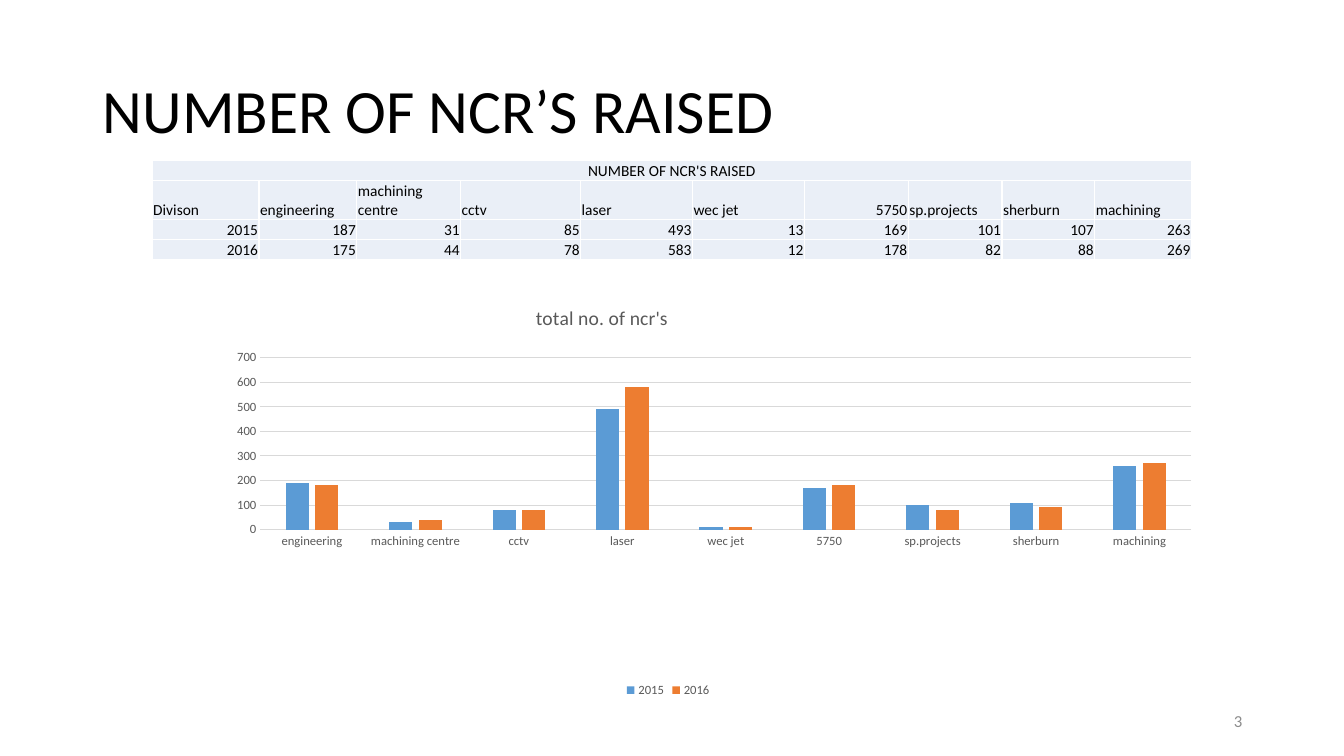
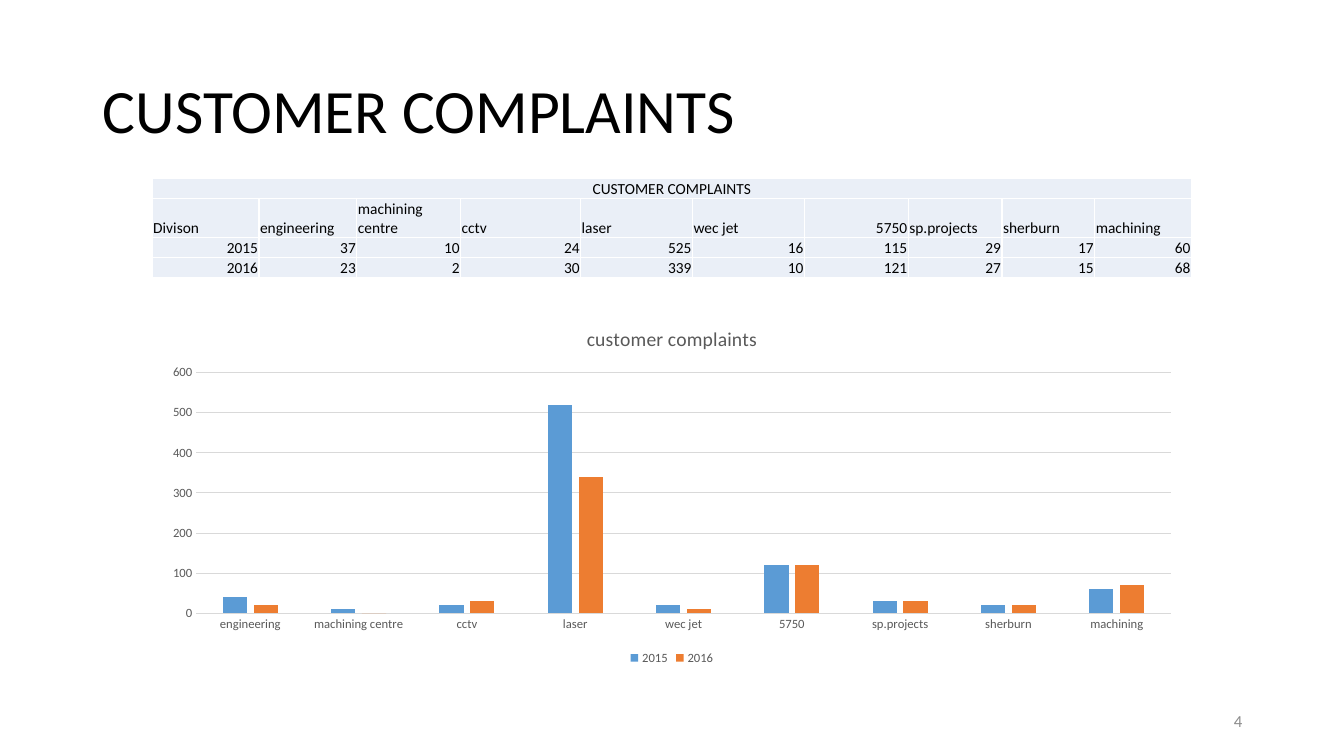
from dataclasses import dataclass
from typing import NamedTuple, Optional

from lxml.etree import SubElement
from pptx import Presentation
from pptx.chart.chart import Chart
from pptx.chart.data import CategoryChartData
from pptx.dml.color import RGBColor
from pptx.enum.chart import XL_CHART_TYPE, XL_LEGEND_POSITION, XL_TICK_MARK
from pptx.enum.text import MSO_ANCHOR, PP_ALIGN
from pptx.oxml import parse_xml
from pptx.oxml.ns import nsdecls, qn
from pptx.slide import Slide
from pptx.table import _Cell
from pptx.text.text import Font
from pptx.util import Inches, Pt


@dataclass(frozen=True)
class Theme:
    """Colours and type sizes of the deck."""
    face: str = "Calibri"
    ink: str = "000000"
    soft: str = "595959"
    pale: str = "8C8C8C"
    grid: str = "D9D9D9"
    cell: str = "EAEFF7"
    edge: str = "FFFFFF"
    bars: tuple = ("5B9BD5", "ED7D31")
    head: float = 44
    name: float = 14
    page: float = 12
    body: float = 11
    base: float = 10
    tick: float = 9


class Box(NamedTuple):
    """A place in grid units of a tenth of an inch."""
    left: float
    top: float
    width: float
    height: float

    def size(self) -> list:
        """Give the four lengths in slide units."""
        return [Inches(part / 10) for part in self]


@dataclass(frozen=True)
class Report:
    """What one slide tells."""
    title: str
    label: str
    name: str
    page: str
    rows: tuple
    table: Box
    chart: Box
    top: int
    spot: Optional[tuple] = None
    plot: Optional[tuple] = None


THEME = Theme()
TITLE = Box(9.2, 4, 115, 14.5)
PAGE = Box(94.2, 69.5, 30, 4)
COLS = (10.6, 9.7, 10.3, 11.9, 11.1, 11.1, 10.3, 9.3, 9.2, 9.6)
LINES = (1.9, 3.8, 1.9, 1.9)
YEARS = ("2015", "2016")
UNITS = ("engineering", "machining centre", "cctv", "laser", "wec jet",
         "5750", "sp.projects", "sherburn", "machining")
REPORTS = (
    Report("NUMBER OF NCR’S RAISED", "NUMBER OF NCR'S RAISED",
           "total no. of ncr's", "3",
           ((187, 31, 85, 493, 13, 169, 101, 107, 263),
            (175, 44, 78, 583, 12, 178, 82, 88, 269)),
           Box(15.1, 15.9, 103.1, 9.5), Box(14.4, 29, 103.8, 40.6), 700,
           (0.37, 0.02), (0.11, 0.16, 0.89, 0.42)),
    Report("CUSTOMER COMPLAINTS", "CUSTOMER COMPLAINTS",
           "customer complaints", "4",
           ((37, 10, 24, 525, 16, 115, 29, 17, 60),
            (23, 2, 30, 339, 10, 121, 27, 15, 68)),
           Box(15.1, 17.7, 103.1, 9.5), Box(15.1, 30.7, 103.1, 35.7), 600),
)


def tint(text: str) -> RGBColor:
    """Turn a hex text into a colour."""
    return RGBColor.from_string(text)


def style(font: Font, size: float, color: str) -> None:
    """Set face, size and colour of a font."""
    font.name, font.size, font.bold = THEME.face, Pt(size), False
    font.color.rgb = tint(color)


def add_title(slide: Slide, text: str) -> None:
    """Fill and move the title placeholder."""
    title = slide.shapes.title
    title.left, title.top, title.width, title.height = TITLE.size()
    frame = title.text_frame
    frame.text = text
    frame.vertical_anchor = MSO_ANCHOR.MIDDLE
    line = frame.paragraphs[0]
    line.alignment, line.line_spacing = PP_ALIGN.LEFT, 0.9
    style(line.font, THEME.head, THEME.ink)


def add_page(slide: Slide, text: str) -> None:
    """Put the page number at the lower right."""
    frame = slide.shapes.add_textbox(*PAGE.size()).text_frame
    frame.word_wrap = True
    frame.vertical_anchor = MSO_ANCHOR.MIDDLE
    line = frame.paragraphs[0]
    line.text, line.alignment = text, PP_ALIGN.RIGHT
    style(line.font, THEME.page, THEME.pale)


def fill_cell(cell: _Cell, text: str, align: PP_ALIGN) -> None:
    """Write a cell with its fill and four borders."""
    cell.text = text
    cell.vertical_anchor = MSO_ANCHOR.BOTTOM
    cell.margin_left = cell.margin_right = cell.margin_top = Inches(0.01)
    cell.margin_bottom = 0
    line = cell.text_frame.paragraphs[0]
    line.alignment = align
    style(line.font, THEME.body, THEME.ink)
    cell.fill.solid()
    cell.fill.fore_color.rgb = tint(THEME.cell)
    props = cell._tc.get_or_add_tcPr()
    for spot, side in enumerate("LRTB"):
        props.insert(spot, parse_xml(
            f'<a:ln{side} {nsdecls("a")} w="{Pt(1)}"><a:solidFill>'
            f'<a:srgbClr val="{THEME.edge}"/></a:solidFill></a:ln{side}>'))


def add_grid(slide: Slide, report: Report) -> None:
    """Draw the table of figures by year and division."""
    body = [("Divison", *UNITS)]
    body += [(year, *map(str, row)) for year, row in zip(YEARS, report.rows)]
    table = slide.shapes.add_table(
        len(LINES), len(COLS), *report.table.size()).table
    table.first_row = table.horz_banding = False
    for col, width in zip(table.columns, COLS):
        col.width = Inches(width / 10)
    for row, height in zip(table.rows, LINES):
        row.height = Inches(height / 10)
    table.cell(0, 0).merge(table.cell(0, len(COLS) - 1))
    for col in range(len(COLS)):
        fill_cell(table.cell(0, col), "" if col else report.label,
                  PP_ALIGN.CENTER)
    for at, texts in enumerate(body, 1):
        for col, text in enumerate(texts):
            side = PP_ALIGN.RIGHT if text.isdigit() else PP_ALIGN.LEFT
            fill_cell(table.cell(at, col), text, side)


def place(part, index: int, shares: tuple) -> None:
    """Fix a chart part at shares of the chart's size."""
    for old in part.findall(qn("c:layout")):
        part.remove(old)
    layout = parse_xml(f'<c:layout {nsdecls("c")}><c:manualLayout/></c:layout>')
    rules = [("xMode", "edge"), ("yMode", "edge"), *zip("xywh", shares)]
    if len(shares) == 4:
        rules.insert(0, ("layoutTarget", "inner"))
    for tag, value in rules:
        SubElement(layout[0], qn(f"c:{tag}")).set("val", str(value))
    part.insert(index, layout)


def style_axes(chart: Chart, top: int) -> None:
    """Set scale, lines and labels of both axes."""
    for axis in (chart.category_axis, chart.value_axis):
        axis.major_tick_mark = axis.minor_tick_mark = XL_TICK_MARK.NONE
        style(axis.tick_labels.font, THEME.tick, THEME.soft)
    value = chart.value_axis
    value.minimum_scale, value.maximum_scale, value.major_unit = 0, top, 100
    value.format.line.fill.background()
    value.has_major_gridlines = True
    for owner in (chart.category_axis, value.major_gridlines):
        owner.format.line.width = Pt(0.75)
        owner.format.line.color.rgb = tint(THEME.grid)


def add_bars(slide: Slide, report: Report) -> None:
    """Draw the clustered columns of both years, rounded to tens."""
    data = CategoryChartData()
    data.categories = UNITS
    for year, row in zip(YEARS, report.rows):
        data.add_series(year, [round(value, -1) for value in row])
    chart = slide.shapes.add_chart(
        XL_CHART_TYPE.COLUMN_CLUSTERED, *report.chart.size(), data).chart
    style(chart.font, THEME.base, THEME.ink)
    chart.has_title = True
    title = chart.chart_title
    title.text_frame.text = report.name
    style(title.text_frame.paragraphs[0].font, THEME.name, THEME.soft)
    chart.has_legend = True
    chart.legend.position = XL_LEGEND_POSITION.BOTTOM
    chart.legend.include_in_layout = False
    style(chart.legend.font, THEME.tick, THEME.soft)
    style_axes(chart, report.top)
    plot = chart.plots[0]
    plot.gap_width, plot.overlap, plot.vary_by_categories = 219, -27, False
    for series, color in zip(plot.series, THEME.bars):
        series.format.fill.solid()
        series.format.fill.fore_color.rgb = tint(color)
    if report.spot:
        place(title._element, 1, report.spot)
    if report.plot:
        place(chart._chartSpace.chart.plotArea, 0, report.plot)


def main() -> None:
    """Build and save the deck."""
    deck = Presentation()
    deck.slide_width, deck.slide_height = Inches(13.33), Inches(7.5)
    for report in REPORTS:
        slide = deck.slides.add_slide(deck.slide_layouts[5])
        add_title(slide, report.title)
        add_grid(slide, report)
        add_page(slide, report.page)
        add_bars(slide, report)
    deck.save("out.pptx")


if __name__ == "__main__":
    main()
